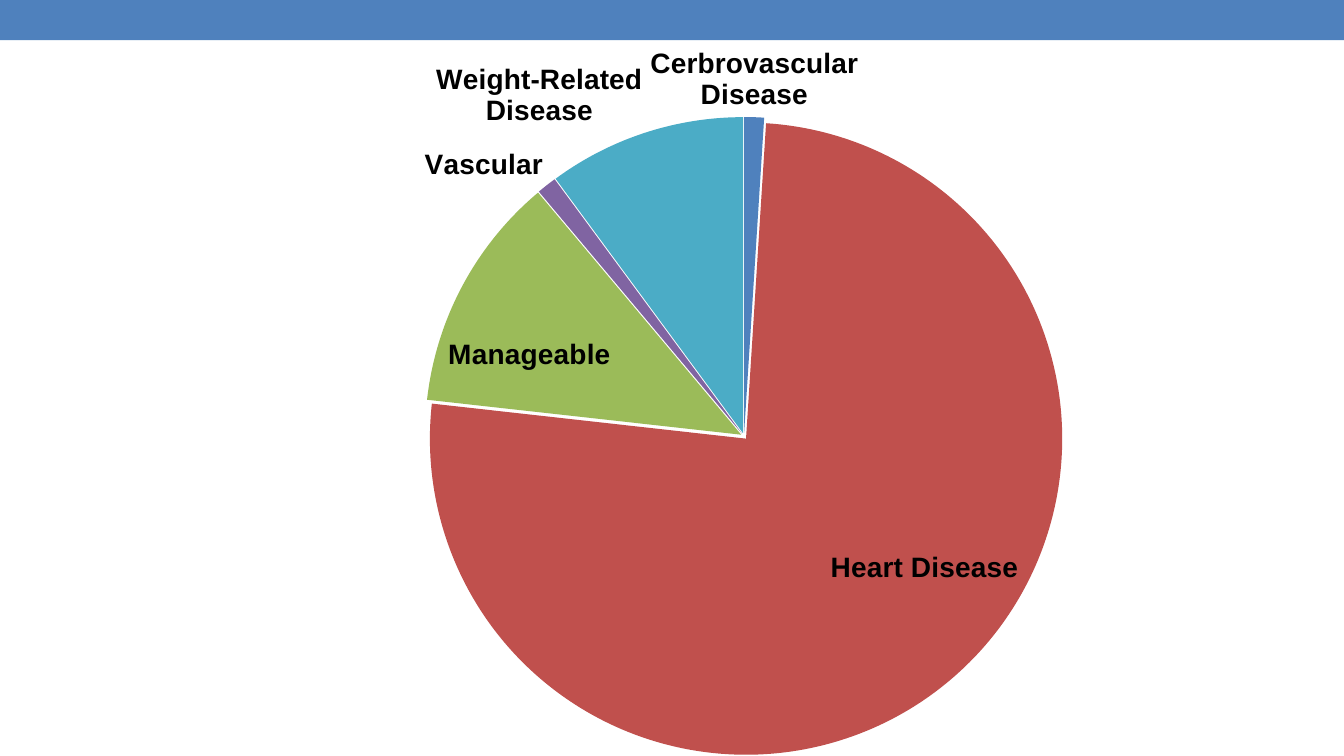
from dataclasses import dataclass

from lxml.etree import SubElement
from pptx import Presentation
from pptx.chart.data import CategoryChartData
from pptx.dml.color import RGBColor
from pptx.enum.chart import XL_CHART_TYPE as ChartType, XL_LABEL_POSITION as LabelPosition
from pptx.enum.shapes import MSO_SHAPE as Preset
from pptx.oxml.ns import qn
from pptx.util import Inches, Pt


@dataclass(frozen=True)
class Theme:
    font: str = "Arial"
    base_size: int = 10
    label_size: int = 20
    text: str = "000000"
    band: str = "4F81BD"


THEME = Theme()
WIDTH, HEIGHT = Inches(13.33), Inches(7.5)
BAND_BOX = (0, 0, WIDTH, Inches(0.4))
PIE_BOX = tuple(map(Inches, (-1.04, 0.35, 15.45, 7.3)))
PLOT_SHARES = {"x": 0.34, "y": 0.11, "w": 0.41, "h": 0.87}
DISEASES = [
    ("Cerbrovascular Disease", 1, "4F81BD"),
    ("Heart Disease", 75, "C0504D"),
    ("Manageable", 12, "9BBB59"),
    ("Vascular", 1, "8064A2"),
    ("Weight-Related Disease", 10, "4BACC6"),
]


def paint(fill, color):
    fill.solid()
    fill.fore_color.rgb = RGBColor.from_string(color)


def style_font(font, size, bold):
    font.name, font.size, font.bold = THEME.font, Pt(size), bold
    font.color.rgb = RGBColor.from_string(THEME.text)


def add_band(slide, box):
    band = slide.shapes.add_shape(Preset.RECTANGLE, *box)
    band.shadow.inherit = False
    paint(band.fill, THEME.band)
    band.line.fill.background()


def place_plot(chart, shares):
    """Fix the inner plot area at shares of the chart's box."""
    plot_area = chart._chartSpace.chart.plotArea
    layout = plot_area.find(qn("c:layout"))
    if layout is None:
        layout = SubElement(plot_area, qn("c:layout"))
        plot_area.insert(0, layout)
    manual = SubElement(layout, qn("c:manualLayout"))
    settings = {"layoutTarget": "inner", "xMode": "edge", "yMode": "edge", **shares}
    for tag, value in settings.items():
        SubElement(manual, qn(f"c:{tag}")).set("val", str(value))


def explode(series, percent):
    explosion = SubElement(series._element, qn("c:explosion"))
    explosion.set("val", str(percent))
    series._element.find(qn("c:dPt")).addprevious(explosion)


def add_disease_pie(slide, box):
    names, values, colors = zip(*DISEASES)
    pie_data = CategoryChartData(number_format="#,##0.00")
    pie_data.categories = names
    pie_data.add_series("Series 1", values)
    chart = slide.shapes.add_chart(ChartType.PIE, *box, pie_data).chart
    chart.has_legend = chart.has_title = False
    style_font(chart.font, THEME.base_size, False)
    place_plot(chart, PLOT_SHARES)

    plot = chart.plots[0]
    plot.vary_by_categories = True
    series = plot.series[0]
    for index, color in enumerate(colors):
        paint(series.points[index].format.fill, color)
    explode(series, 1)

    labels = series.data_labels
    labels.show_category_name = True
    labels.show_value = labels.show_percentage = False
    labels.position = LabelPosition.BEST_FIT
    style_font(labels.font, THEME.label_size, True)


def main():
    deck = Presentation()
    deck.slide_width, deck.slide_height = WIDTH, HEIGHT
    slide = deck.slides.add_slide(deck.slide_layouts[6])
    add_band(slide, BAND_BOX)
    add_disease_pie(slide, PIE_BOX)
    deck.save("out.pptx")


if __name__ == "__main__":
    main()
